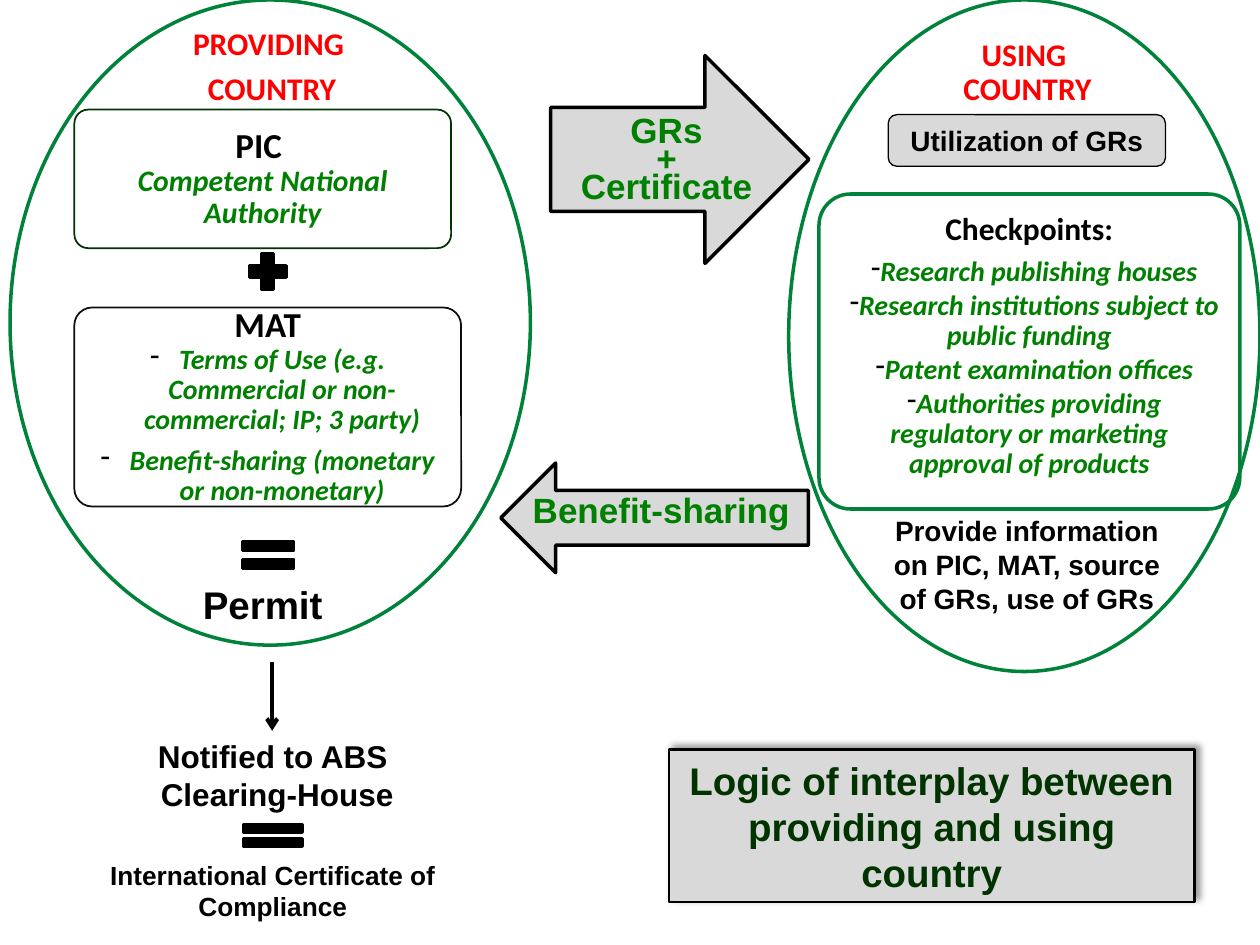
from dataclasses import dataclass

from lxml.etree import SubElement
from pptx import Presentation
from pptx.dml.color import RGBColor
from pptx.enum.shapes import MSO_CONNECTOR as Connector, MSO_SHAPE as Shape
from pptx.enum.text import MSO_ANCHOR as Anchor, MSO_AUTO_SIZE as AutoSize, PP_ALIGN as Align
from pptx.oxml.ns import qn
from pptx.util import Inches, Pt


@dataclass(frozen=True)
class Theme:
    sans: str = "Arial"
    body: str = "Calibri"
    black: str = "000000"
    white: str = "FFFFFF"
    gray: str = "D9D9D9"
    red: str = "FF0000"
    green: str = "008000"
    outline: str = "00823B"
    dark_green: str = "003300"
    near_black: str = "0D0D0D"
    heading: int = 22
    term: int = 20
    label: int = 18
    detail: int = 17
    note: int = 16
    caption: int = 15


@dataclass(frozen=True)
class Para:
    text: str
    size: int
    color: str = Theme.black
    font: str = Theme.sans
    italic: bool = False
    after: float = 0
    spacing: object = None
    align: object = Align.CENTER
    hang: object = None


class Page:
    def __init__(self, slide, theme):
        self.slide = slide
        self.theme = theme

    def style(self, box, fill=None, line=None, width=2.0, alpha=None):
        if fill:
            box.fill.solid()
            box.fill.fore_color.rgb = RGBColor.from_string(fill)
            if alpha:
                color = box._element.spPr.find(f"{qn('a:solidFill')}/{qn('a:srgbClr')}")
                SubElement(color, qn("a:alpha"), val=str(alpha * 1000))
        else:
            box.fill.background()
        if line:
            box.line.color.rgb = RGBColor.from_string(line)
            box.line.width = Pt(width)
        else:
            box.line.fill.background()

    def set_text(self, box, paras, insets=(0.1, 0.05, 0.1, 0.05), anchor=Anchor.TOP):
        frame = box.text_frame
        frame.text = "\n".join(item.text for item in paras)
        frame.word_wrap = True
        frame.auto_size = AutoSize.NONE
        frame.vertical_anchor = anchor
        (frame.margin_left, frame.margin_top,
         frame.margin_right, frame.margin_bottom) = map(Inches, insets)
        for para, item in zip(frame.paragraphs, paras):
            para.alignment = item.align
            para.space_after = Pt(item.after)
            if item.spacing:
                para.line_spacing = item.spacing
            if item.hang is not None:
                self.bullet(para, *item.hang)
            for span in para.runs:
                span.font.name = item.font
                span.font.size = Pt(item.size)
                span.font.bold = True
                span.font.italic = item.italic
                span.font.color.rgb = RGBColor.from_string(item.color)

    def bullet(self, para, margin, indent):
        props = para._p.get_or_add_pPr()
        props.set("marL", str(Inches(margin)))
        props.set("indent", str(Inches(indent)))
        color = SubElement(props, qn("a:buClr"))
        SubElement(color, qn("a:srgbClr"), val=self.theme.black)
        SubElement(props, qn("a:buFontTx"))
        SubElement(props, qn("a:buChar"), char="-")

    def shape(self, kind, at, adjust=(), rotation=0, **look):
        box = self.slide.shapes.add_shape(kind, *map(Inches, at))
        box.shadow.inherit = False
        box.rotation = rotation
        for index, value in enumerate(adjust):
            box.adjustments[index] = value
        self.style(box, **look)
        return box

    def text(self, at, paras, **layout):
        box = self.slide.shapes.add_textbox(*map(Inches, at))
        self.set_text(box, paras, **layout)

    def title(self, at, para, **look):
        box = self.slide.shapes.title
        box.left, box.top, box.width, box.height = map(Inches, at)
        self.style(box, **look)
        effects = SubElement(box._element.spPr, qn("a:effectLst"))
        shadow = SubElement(effects, qn("a:outerShdw"), blurRad=str(Pt(4)),
                            dist=str(Pt(3)), dir=str(315 * 60000),
                            algn="bl", rotWithShape="0")
        color = SubElement(shadow, qn("a:srgbClr"), val=self.theme.black)
        SubElement(color, qn("a:alpha"), val="40000")
        self.set_text(box, [para], anchor=Anchor.MIDDLE)

    def arrow(self, start, end, color, width):
        line = self.slide.shapes.add_connector(
            Connector.STRAIGHT, *map(Inches, start + end))
        line.line.color.rgb = RGBColor.from_string(color)
        line.line.width = Pt(width)
        SubElement(line._element.spPr.find(qn("a:ln")), qn("a:tailEnd"), type="arrow")
        SubElement(line._element.spPr, qn("a:effectLst"))


def main():
    theme = Theme()
    deck = Presentation()
    deck.slide_width, deck.slide_height = Inches(10), Inches(7.5)
    page = Page(deck.slides.add_slide(deck.slide_layouts[5]), theme)

    tight = (0.06, 0.05, 0.06, 0.05)
    solid = dict(fill=theme.black, line=theme.black)
    block = dict(fill=theme.gray, line=theme.black)
    equal = (0.235, 0.224)

    def calibri(text, size, color=theme.black, **more):
        return Para(text, size, color, theme.body, spacing=0.9, **more)

    def detail(text, size, **more):
        return calibri(text, size, theme.green, italic=True, **more)

    page.title((5.31, 5.95, 4.17, 1.21),
               Para("Logic of interplay between providing and using country",
                    theme.heading, theme.dark_green), width=1.5, **block)

    page.shape(Shape.OVAL, (0.08, 0, 4.13, 5.12), line=theme.outline)
    page.shape(Shape.MATH_PLUS, (1.93, 1.96, 0.39, 0.39), **solid)
    consent = page.shape(Shape.ROUNDED_RECTANGLE, (0.59, 0.87, 2.99, 1.1), (0.1,),
                         fill=theme.white, line=theme.dark_green, width=1)
    page.set_text(consent, [calibri("PIC ", theme.term),
                            detail("Competent National Authority", theme.detail, after=6)],
                  insets=tight, anchor=Anchor.MIDDLE)
    terms = page.shape(Shape.ROUNDED_RECTANGLE, (0.59, 2.44, 3.07, 1.58), (0.09,),
                       fill=theme.white, line=theme.near_black, width=1)
    page.set_text(terms, [calibri("MAT", theme.term)] + [
        detail(text, theme.note, after=6, hang=(0.23, -0.23)) for text in (
            "Terms of Use (e.g. Commercial or non-commercial; IP; 3 party)",
            "Benefit-sharing (monetary or non-monetary)")],
        insets=tight, anchor=Anchor.MIDDLE)
    page.text((1.06, 4.56, 2.05, 0.47), [Para("Permit", theme.heading)])
    page.shape(Shape.MATH_EQUAL, (1.85, 4.25, 0.55, 0.31), equal, **solid)
    page.text((0.83, 0.17, 2.66, 0.74),
              [calibri(text, theme.label, theme.red, after=6)
               for text in ("PROVIDING ", "COUNTRY")],
              insets=tight, anchor=Anchor.MIDDLE)

    checks = page.shape(Shape.ROUNDED_RECTANGLE, (6.5, 1.54, 3.34, 2.5), (0.1,),
                        fill=theme.white, alpha=90, line=theme.outline)
    page.set_text(checks, [calibri("Checkpoints:", theme.label, after=6)] + [
        detail(text, theme.note, after=2, hang=(0, 0.08)) for text in (
            "Research publishing houses",
            "Research institutions subject to public funding",
            "Patent examination offices",
            "Authorities providing regulatory or marketing approval of products")],
        insets=(0.08, 0.08, 0.08, 0.53))
    page.shape(Shape.OVAL, (6.26, 0, 3.74, 5.33), line=theme.outline)
    page.text((6.89, 4.03, 2.52, 0.91),
              [Para("Provide information on PIC, MAT, source of GRs, use of GRs",
                    theme.note)])
    use = page.shape(Shape.ROUNDED_RECTANGLE, (7.05, 0.91, 2.2, 0.41),
                     width=0.75, **block)
    page.set_text(use, [Para("Utilization of GRs", theme.note)], anchor=Anchor.MIDDLE)
    page.text((7.13, 0.21, 2.05, 0.74),
              [calibri("USING \vCOUNTRY", theme.label, theme.red)],
              insets=tight, anchor=Anchor.MIDDLE)

    page.shape(Shape.RIGHT_ARROW, (4.37, 0.44, 2.05, 1.65), **block)
    page.text((4.13, 0.92, 2.32, 0.77),
              [Para(text, theme.term, theme.green, spacing=Pt(16))
               for text in ("GRs", "+", "Certificate")])

    page.text((0.75, 6.77, 2.83, 0.61),
              [Para("International Certificate of Compliance", theme.caption)])
    page.shape(Shape.MATH_EQUAL, (1.85, 6.51, 0.63, 0.24), equal, **solid)
    page.text((0.43, 5.8, 3.54, 0.71),
              [Para(text, theme.label) for text in ("Notified to ABS ", "Clearing-House")])
    page.arrow((2.16, 5.25), (2.16, 5.8), theme.black, 2.25)

    page.shape(Shape.DOWN_ARROW, (4.76, 2.89, 0.87, 2.44), rotation=90, **block)
    page.text((4.13, 3.83, 2.36, 0.44),
              [Para("Benefit-sharing", theme.term, theme.green, align=Align.LEFT)])

    deck.save("out.pptx")


if __name__ == "__main__":
    main()
